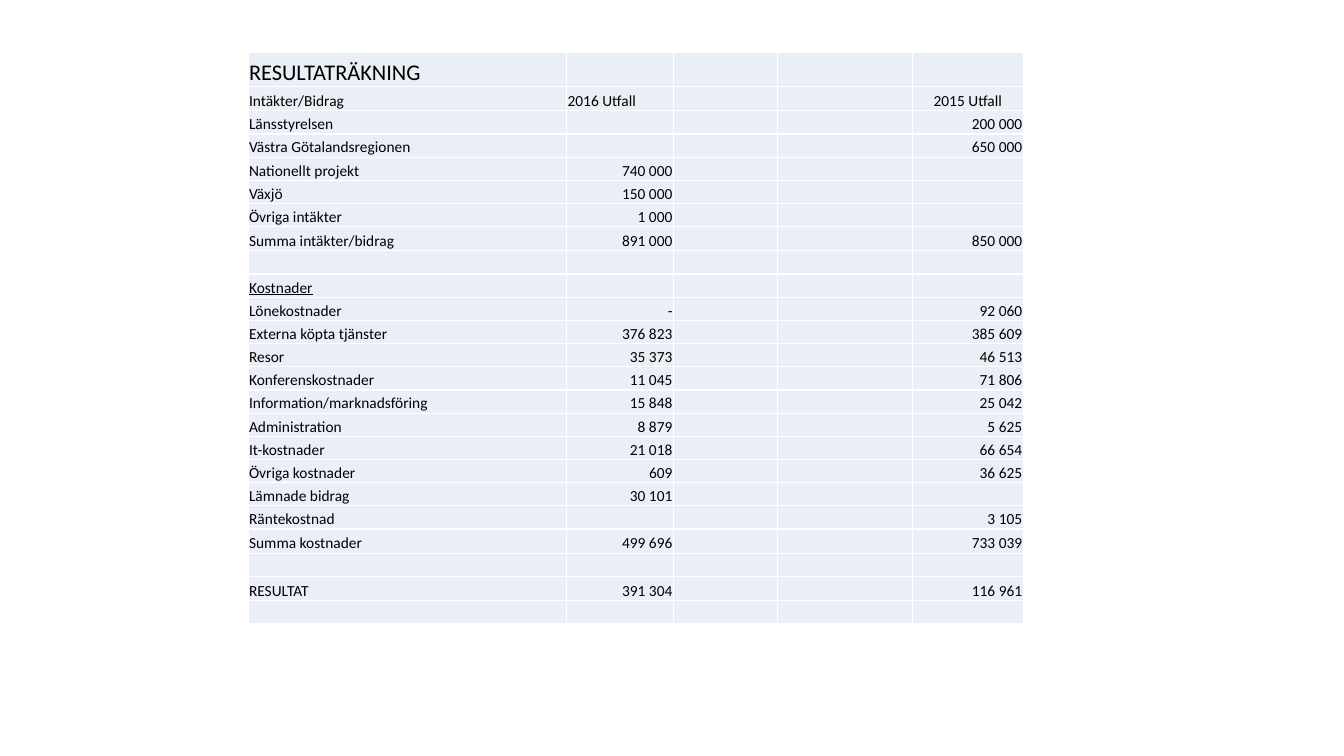
from dataclasses import dataclass

from lxml.etree import SubElement
from pptx import Presentation
from pptx.dml.color import RGBColor
from pptx.enum.text import MSO_ANCHOR as Anchor, PP_ALIGN as Align
from pptx.oxml.ns import qn
from pptx.util import Inches, Pt


@dataclass(frozen=True)
class Theme:
    font: str = "Calibri"
    title_size: int = 16
    body_size: int = 11
    text: str = "000000"
    fill: str = "EAEFF7"
    border: str = "FFFFFF"
    border_width: int = 1


@dataclass(frozen=True)
class Entry:
    label: str = ""
    outcome_2016: str = ""
    outcome_2015: str = ""
    height: float = 0.23
    size: int = Theme.body_size
    underline: bool = False
    align_2016: Align = Align.RIGHT
    align_2015: Align = Align.RIGHT


THEME = Theme()
LEFT, TOP = 2.46, 0.52
COLUMN_WIDTHS = (3.16, 1.06, 1.03, 1.34, 1.1)
TALL = 0.24

ENTRIES = (
    Entry("RESULTATRÄKNING", height=0.34, size=THEME.title_size),
    Entry("Intäkter/Bidrag", "2016 Utfall", "2015 Utfall", TALL,
          align_2016=Align.LEFT, align_2015=Align.CENTER),
    # Income
    Entry("Länsstyrelsen", "", "200 000"),
    Entry("Västra Götalandsregionen", "", "650 000"),
    Entry("Nationellt projekt", "740 000"),
    Entry("Växjö", "150 000"),
    Entry("Övriga intäkter", "1 000"),
    Entry("Summa intäkter/bidrag", "891 000", "850 000", TALL),
    Entry(),
    # Costs
    Entry("Kostnader", underline=True),
    Entry("Lönekostnader", "-", "92 060"),
    Entry("Externa köpta tjänster", "376 823", "385 609"),
    Entry("Resor", "35 373", "46 513"),
    Entry("Konferenskostnader", "11 045", "71 806"),
    Entry("Information/marknadsföring", "15 848", "25 042"),
    Entry("Administration", "8 879", "5 625"),
    Entry("It-kostnader", "21 018", "66 654"),
    Entry("Övriga kostnader", "609", "36 625"),
    Entry("Lämnade bidrag", "30 101"),
    Entry("Räntekostnad", "", "3 105"),
    Entry("Summa kostnader", "499 696", "733 039", TALL),
    Entry(),
    # Result
    Entry("RESULTAT", "391 304", "116 961", TALL),
    Entry(),
)


def add_borders(cell) -> None:
    """Draw all four cell edges; the fill must be set afterwards."""
    properties = cell._tc.get_or_add_tcPr()
    for edge in ("a:lnL", "a:lnR", "a:lnT", "a:lnB"):
        line = SubElement(properties, qn(edge), w=str(Pt(THEME.border_width)))
        fill = SubElement(line, qn("a:solidFill"))
        SubElement(fill, qn("a:srgbClr"), val=THEME.border)


def format_cell(cell, text: str, align: Align, entry: Entry) -> None:
    add_borders(cell)
    cell.fill.solid()
    cell.fill.fore_color.rgb = RGBColor.from_string(THEME.fill)
    cell.margin_left = cell.margin_right = cell.margin_top = Inches(0.01)
    cell.margin_bottom = 0
    cell.vertical_anchor = Anchor.BOTTOM

    paragraph = cell.text_frame.paragraphs[0]
    paragraph.alignment = align
    font = paragraph.font
    font.name = THEME.font
    font.size = Pt(entry.size)
    font.color.rgb = RGBColor.from_string(THEME.text)
    if entry.underline:
        font.underline = True
    if text:
        paragraph.add_run().text = text
    else:
        # Keep empty cells from stretching their row
        SubElement(paragraph._p, qn("a:endParaRPr"), sz=str(THEME.body_size * 100))


def add_income_statement(slide) -> None:
    table = slide.shapes.add_table(
        len(ENTRIES), len(COLUMN_WIDTHS), Inches(LEFT), Inches(TOP),
        Inches(sum(COLUMN_WIDTHS)), Inches(sum(entry.height for entry in ENTRIES)),
    ).table
    table.first_row = table.horz_banding = False

    for column, width in zip(table.columns, COLUMN_WIDTHS):
        column.width = Inches(width)
    for row, entry in zip(table.rows, ENTRIES):
        row.height = Inches(entry.height)
        contents = (
            (entry.label, Align.LEFT),
            (entry.outcome_2016, entry.align_2016),
            ("", Align.LEFT),
            ("", Align.LEFT),
            (entry.outcome_2015, entry.align_2015),
        )
        for cell, (text, align) in zip(row.cells, contents):
            format_cell(cell, text, align, entry)


def main() -> None:
    presentation = Presentation()
    presentation.slide_width = Inches(13.33)
    presentation.slide_height = Inches(7.5)
    slide = presentation.slides.add_slide(presentation.slide_layouts[6])
    add_income_statement(slide)
    presentation.save("out.pptx")


if __name__ == "__main__":
    main()
